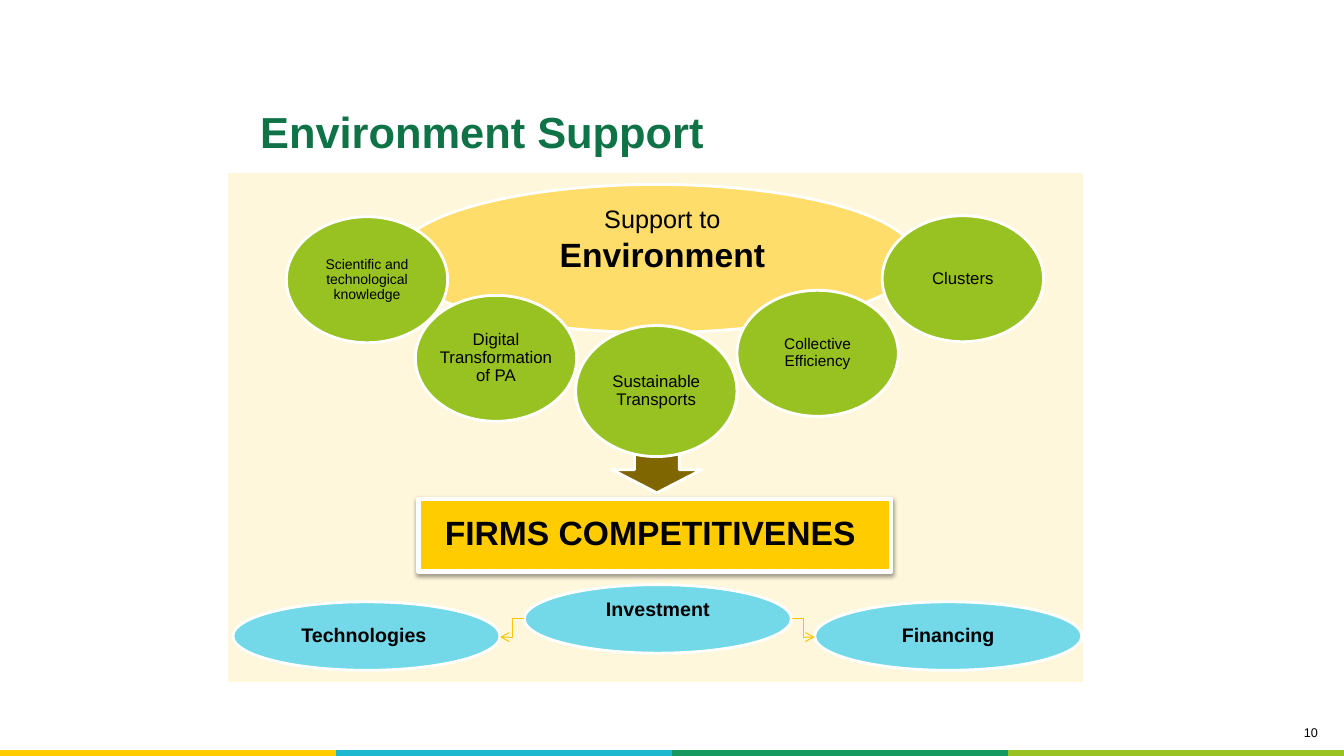
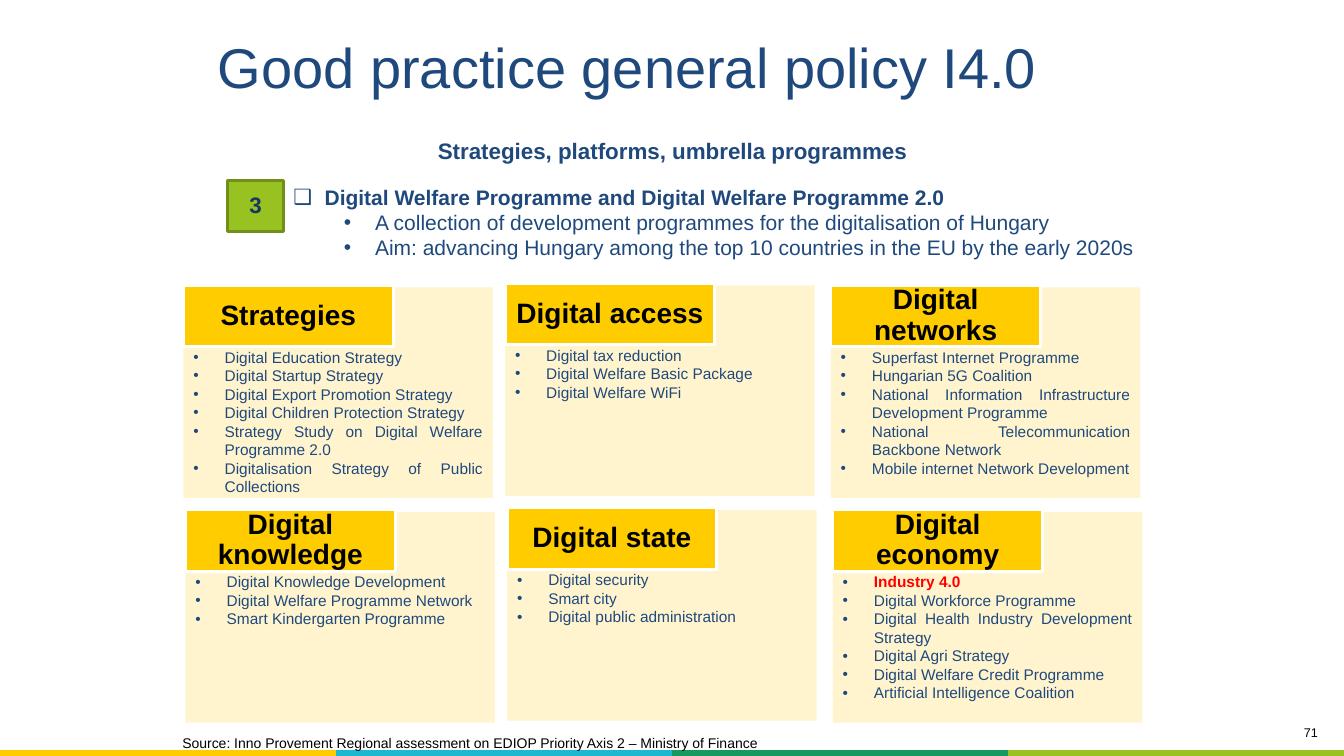
import pptx
import pptx.util
import pptx.dml.color
import pptx.enum.dml
import pptx.enum.shapes
import pptx.enum.text
import pptx.oxml
import pptx.oxml.ns
import lxml.etree

Inches = pptx.util.Inches
Pt = pptx.util.Pt
SHAPE = pptx.enum.shapes.MSO_SHAPE
ALIGN = pptx.enum.text.PP_ALIGN
ANCHOR = pptx.enum.text.MSO_ANCHOR
qn = pptx.oxml.ns.qn

FONT = "Arial"
PLAIN_TABLE = "{2D5ABB26-0587-4C30-8999-92F81FD0307C}"
COLORS = {
    "black": "000000", "white": "FFFFFF", "red": "FF0000",
    "yellow": "FFCC00", "cyan": "1CB8CF", "teal": "159961", "green": "98C222",
    "title": "107348", "navy": "1F497D", "dark_navy": "17375E", "olive": "709019",
    "cream": "FFF4CE", "gold": "FEDD6B", "brown": "806600", "sky": "73D9E9", "amber": "FDC503",
}
BAND = ["yellow", "cyan", "teal", "green"]
CARD_SIZE = (3.07, 2.09)
CARDS = [
    [("Strategies", ["Digital Education Strategy", "Digital Startup Strategy",
                     "Digital Export Promotion Strategy", "Digital Children Protection Strategy",
                     "Strategy Study on Digital Welfare Programme 2.0",
                     "Digitalisation Strategy of Public Collections"]),
     ("Digital access", ["Digital tax reduction", "Digital Welfare Basic Package",
                         "Digital Welfare WiFi"]),
     ("Digital networks", ["Superfast Internet Programme", "Hungarian 5G Coalition",
                           "National Information Infrastructure Development Programme",
                           "National Telecommunication Backbone Network",
                           "Mobile internet Network Development"])],
    [("Digital knowledge", ["Digital Knowledge Development", "Digital Welfare Programme Network",
                            "Smart Kindergarten Programme"]),
     ("Digital state", ["Digital security", "Smart city", "Digital public administration"]),
     ("Digital economy", ["Industry 4.0", "Digital Workforce Programme",
                          "Digital Health Industry Development Strategy",
                          "Digital Agri Strategy", "Digital Welfare Credit Programme",
                          "Artificial Intelligence Coalition"])],
]


def rgb(name):
    """Return the named colour."""
    return pptx.dml.color.RGBColor.from_string(COLORS[name])


def set_attrs(obj, values):
    """Set every attribute in a dict of format values."""
    for name, value in values.items():
        setattr(obj, name, value)


def set_frame(s, ins=(0.1, 0.05, 0.1, 0.05), anchor=ANCHOR.TOP):
    """Set wrapping, anchor and insets of a shape's text frame."""
    tf = s.text_frame
    sides = ("margin_left", "margin_top", "margin_right", "margin_bottom")
    set_attrs(tf, dict(zip(sides, map(Inches, ins))))
    set_attrs(tf, {"word_wrap": True, "vertical_anchor": anchor,
                   "auto_size": pptx.enum.text.MSO_AUTO_SIZE.NONE})
    return tf


def add_text(tf, text, size, color="black", bold=False, align=ALIGN.LEFT, spacing=1.0, level=0):
    """Write one paragraph into a text frame."""
    p = tf.paragraphs[0] if not tf.paragraphs[0].runs else tf.add_paragraph()
    set_attrs(p, {"alignment": align, "level": level, "line_spacing": spacing,
                  "space_before": Pt(0), "space_after": Pt(0)})
    r = p.add_run()
    r.text = text
    set_attrs(r.font, {"name": FONT, "size": Pt(size), "bold": bold})
    r.font.color.rgb = rgb(color)
    return p


def add_bullet(p, char, indent):
    """Give a paragraph a coloured bullet and a hanging indent."""
    pPr = p._p.get_or_add_pPr()
    pPr.set("marL", str(Inches(indent)))
    pPr.set("indent", str(-Inches(0.31)))
    clr = lxml.etree.SubElement(pPr, qn("a:buClr"))
    lxml.etree.SubElement(clr, qn("a:srgbClr"), val=COLORS["navy"])
    lxml.etree.SubElement(pPr, qn("a:buFont"), typeface=FONT)
    lxml.etree.SubElement(pPr, qn("a:buChar"), char=char)


def place(s, box):
    """Move and size a shape to a box in inches."""
    set_attrs(s, dict(zip(("left", "top", "width", "height"), map(Inches, box))))


def add_shape(slide, kind, box, fill, line=None, width=2):
    """Add a flat preset shape."""
    s = slide.shapes.add_shape(kind, *map(Inches, box))
    s.shadow.inherit = False
    s.fill.solid()
    s.fill.fore_color.rgb = rgb(fill)
    if line:
        s.line.color.rgb = rgb(line)
        s.line.width = Pt(width)
    else:
        s.line.fill.background()
    return s


def add_label(slide, box, text, size, **style):
    """Add a text box with one paragraph."""
    s = slide.shapes.add_textbox(*map(Inches, box))
    add_text(set_frame(s), text, size, **style)
    return s


def add_footer(slide, number):
    """Draw the colour band table and the slide number."""
    box = (0, 7.44, 13.33, 0.4)
    s = slide.shapes.add_table(1, len(BAND), *map(Inches, box))
    table = s.table
    set_attrs(table, {"first_row": False, "horz_banding": False})
    table._tbl.tblPr.find(qn("a:tableStyleId")).text = PLAIN_TABLE
    table.rows[0].height = Inches(0.17)
    place(s, box)
    for cell, color in zip(table.rows[0].cells, BAND):
        cell.fill.solid()
        cell.fill.fore_color.rgb = rgb(color)
    add_label(slide, (10.55, 7.14, 2.62, 0.31), number, 9, align=ALIGN.RIGHT)


def add_title(slide, box, text, size, color, bold=False):
    """Fill and place the title placeholder."""
    s = slide.shapes.title
    place(s, box)
    add_text(set_frame(s, anchor=ANCHOR.MIDDLE), text, size, color, bold)


def add_arrow(slide, x1, y1, x2, y2):
    """Add an elbow arrow between two points."""
    c = slide.shapes.add_connector(pptx.enum.shapes.MSO_CONNECTOR.ELBOW,
                                   *map(Inches, (x1, y1, x2, y2)))
    c.line.color.rgb = rgb("amber")
    c.line.width = Pt(0.75)
    lxml.etree.SubElement(c.line._get_or_add_ln(), qn("a:tailEnd"), type="arrow")
    lxml.etree.SubElement(c._element.spPr, qn("a:effectLst"))


def add_drop_shadow(s):
    """Give a shape a soft shadow below it."""
    effects = s._element.spPr.find(qn("a:effectLst"))
    outer = lxml.etree.SubElement(effects, qn("a:outerShdw"), blurRad=str(Pt(3.1)),
                                  dist=str(Pt(1.6)), dir="5400000", rotWithShape="0")
    clr = lxml.etree.SubElement(outer, qn("a:srgbClr"), val=COLORS["black"])
    lxml.etree.SubElement(clr, qn("a:alpha"), val="38000")


def add_diagram(slide, x, y, w, h):
    """Draw the support diagram inside its panel."""
    panel = add_shape(slide, SHAPE.RECTANGLE, (x, y, w, h), "cream", "white")
    clr = panel._element.spPr.find(qn("a:solidFill")).find(qn("a:srgbClr"))
    lxml.etree.SubElement(clr, qn("a:alpha"), val="71000")

    firms = add_shape(slide, SHAPE.RECTANGLE, (x + 1.9, y + 3.25, 4.69, 0.72),
                      "yellow", "white", 3)
    add_drop_shadow(firms)
    add_text(set_frame(firms, (0.1, 0.1, 0.19, 0.12), ANCHOR.MIDDLE), "FIRMS COMPETITIVENES",
             24, bold=True, align=ALIGN.CENTER, spacing=0.9)

    add_shape(slide, SHAPE.OVAL, (x + 1.68, y + 0.13, 5.16, 1.47), "gold", "white")
    add_shape(slide, SHAPE.DOWN_ARROW, (x + 3.82, y + 2.73, 0.89, 0.46), "brown", "white")

    for dx, dy, height, text, size in [
            (6.5, 0.44, 1.25, "Clusters", 12),
            (1.87, 1.23, 1.25, "Digital Transformation of PA", 12),
            (5.06, 1.18, 1.25, "Collective Efficiency", 11),
            (3.46, 1.53, 1.3, "Sustainable Transports", 12),
            (0.59, 0.45, 1.25, "Scientific and technological knowledge", 10)]:
        s = add_shape(slide, SHAPE.OVAL, (x + dx, y + dy, 1.6, height), "green", "white")
        add_text(set_frame(s, (0, 0, 0, 0), ANCHOR.MIDDLE), text, size,
                 align=ALIGN.CENTER, spacing=0.9)

    s = add_label(slide, (x + 3.19, y + 0.27, 2.26, 0.81), "Support to", 18, align=ALIGN.CENTER)
    add_text(s.text_frame, "Environment", 24, bold=True, align=ALIGN.CENTER)

    for dx, dy, text, right, bottom in [(0.06, 4.27, "Technologies", 0.05, 0),
                                        (2.95, 4.1, "Investment", 0, 0.18),
                                        (5.83, 4.27, "Financing", 0, 0)]:
        s = add_shape(slide, SHAPE.OVAL, (x + dx, y + dy, 2.65, 0.68), "sky", "white")
        add_text(set_frame(s, (0, 0, right, bottom), ANCHOR.MIDDLE), text, 14,
                 bold=True, align=ALIGN.CENTER, spacing=0.9)
    for start, end in [(5.61, 5.83), (2.95, 2.71)]:
        add_arrow(slide, x + start, y + 4.44, x + end, y + 4.62)


def add_card(slide, x, y, heading, items):
    """Draw one programme card with a heading and a bulleted list."""
    s = add_shape(slide, SHAPE.RECTANGLE, (x, y, *CARD_SIZE), "cream")
    tf = set_frame(s, (0.1, 0.6, 0.1, 0))
    for item in items:
        hot = item == "Industry 4.0"
        p = add_text(tf, item, 11, "red" if hot else "navy", hot, ALIGN.JUSTIFY)
        add_bullet(p, "•", 0.31)
    s = add_shape(slide, SHAPE.RECTANGLE, (x, y - 0.02, 2.08, 0.61), "yellow", "white")
    add_text(set_frame(s, (0.06,) * 4, ANCHOR.MIDDLE), heading, 20,
             bold=True, align=ALIGN.CENTER, spacing=0.9)


def add_programme(slide, x, y):
    """Write the numbered programme summary in the body placeholder."""
    s = slide.placeholders[1]
    place(s, (x + 0.55, y - 0.01, 8.66, 1.02))
    tf = set_frame(s)
    for i, text in enumerate([
            "Digital Welfare Programme and Digital Welfare Programme 2.0",
            "A collection of development programmes for the digitalisation of Hungary",
            "Aim: advancing Hungary among the top 10 countries in the EU by the early 2020s"]):
        p = add_text(tf, text, 15, "navy", i == 0, ALIGN.JUSTIFY, level=min(i, 1))
        add_bullet(p, "•" if i else "❑", 0.81 if i else 0.31)
    s = add_shape(slide, SHAPE.RECTANGLE, (x, y, 0.55, 0.51), "green", "olive")
    add_text(set_frame(s, (0.01,) * 4, ANCHOR.MIDDLE), "3", 16, "dark_navy", True,
             ALIGN.CENTER, 0.9)


def build_environment(prs):
    """Build the environment support slide."""
    slide = prs.slides.add_slide(prs.slide_layouts[5])
    add_footer(slide, "10")
    add_title(slide, (2.48, 1, 8, 0.6), "Environment Support", 31, "title", True)
    add_diagram(slide, 2.25, 1.7, 8.51, 5.08)


def build_practice(prs):
    """Build the good practice slide."""
    slide = prs.slides.add_slide(prs.slide_layouts[1])
    add_footer(slide, "71")
    add_title(slide, (2.06, 0.08, 8.58, 1.15), "Good practice general policy I4.0", 40, "navy")
    add_label(slide, (2.67, 1.31, 8, 0.59), "Strategies, platforms, umbrella programmes", 16,
              color="navy", bold=True, align=ALIGN.CENTER)
    add_programme(slide, 2.26, 1.79)
    for row, cards in enumerate(CARDS):
        for col, (heading, items) in enumerate(cards):
            x = (1.82, 5.01, 8.24)[col] + 0.02 * row
            y = 2.85 + 2.23 * row - (0.02 if col == 1 else 0)
            add_card(slide, x, y, heading, items)
    s = add_label(slide, (1.71, 7.29, 6.3, 0.2),
                  "Source: Inno Provement Regional assessment on EDIOP Priority Axis 2"
                  " – Ministry of Finance", 10)
    set_frame(s, (0.1, 0, 0.1, 0))


def main():
    """Build and save the presentation."""
    prs = pptx.Presentation()
    set_attrs(prs, {"slide_width": Inches(13.33), "slide_height": Inches(7.5)})
    build_environment(prs)
    build_practice(prs)
    prs.save("out.pptx")


if __name__ == "__main__":
    main()
